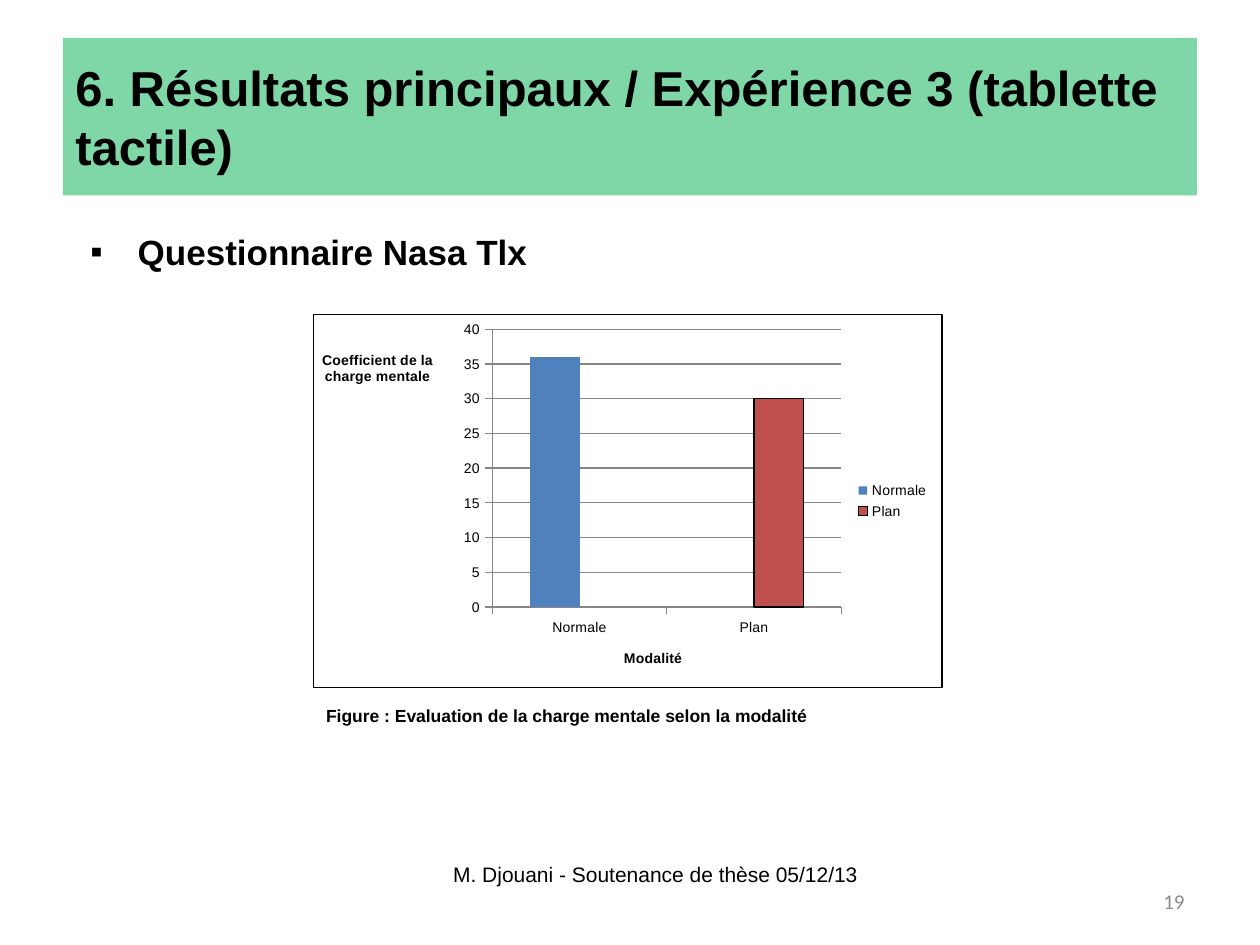
from dataclasses import dataclass

from lxml.etree import SubElement
from pptx import Presentation
from pptx.chart.data import CategoryChartData
from pptx.dml.color import RGBColor
from pptx.enum.chart import XL_CHART_TYPE, XL_LEGEND_POSITION, XL_TICK_MARK
from pptx.enum.shapes import MSO_SHAPE
from pptx.enum.text import MSO_ANCHOR, PP_ALIGN
from pptx.oxml import parse_xml
from pptx.oxml.ns import nsdecls, qn
from pptx.util import Pt


@dataclass(frozen=True)
class Theme:
    font: str = "Arial"
    page_font: str = "Calibri"
    black: RGBColor = RGBColor(0, 0, 0)
    gray: RGBColor = RGBColor(0x8C, 0x8C, 0x8C)
    grid: RGBColor = RGBColor(0x86, 0x86, 0x86)
    green: RGBColor = RGBColor(0x00, 0xB0, 0x50)
    blue: RGBColor = RGBColor(0x4F, 0x81, 0xBD)
    red: RGBColor = RGBColor(0xC0, 0x50, 0x4D)
    title: int = 28
    head: int = 20
    foot: int = 12
    note: int = 10
    chart: int = 8


T = Theme()


def style(font, size, bold=False, color=T.black, name=T.font):
    font.name, font.size, font.bold = name, Pt(size), bold
    font.color.rgb = color


def write(shape, text, size, bold=False, color=T.black, name=T.font,
          align=PP_ALIGN.LEFT, anchor=MSO_ANCHOR.TOP):
    frame = shape.text_frame
    frame.word_wrap = True
    frame.vertical_anchor = anchor
    para = frame.paragraphs[0]
    para.text = text
    para.alignment = align
    style(para.font, size, bold, color, name)
    return para


def add_text(slide, box, text, size, **look):
    shape = slide.shapes.add_textbox(*map(Pt, box))
    return write(shape, text, size, **look)


def add_band(slide, box, text):
    band = slide.shapes.add_shape(MSO_SHAPE.RECTANGLE, *map(Pt, box))
    band.shadow.inherit = False
    band.fill.solid()
    band.fill.fore_color.rgb = T.green
    band.line.fill.background()
    # Half-transparent fill
    tint = band.fill._xPr.find(".//" + qn("a:srgbClr"))
    SubElement(tint, qn("a:alpha")).set("val", "50000")
    write(band, text, T.title, bold=True, anchor=MSO_ANCHOR.MIDDLE)


def add_bullet(para, mark, indent):
    props = para._p.get_or_add_pPr()
    props.set("marL", str(Pt(indent)))
    props.set("indent", str(-Pt(indent)))
    SubElement(props, qn("a:buFont")).set("typeface", T.font)
    SubElement(props, qn("a:buChar")).set("char", mark)
    # The paragraph font must follow the bullet
    props.append(props.find(qn("a:defRPr")))


def place(part, index, inner=False, **spots):
    """Set a manual chart layout, in fractions of the chart."""
    old = part.find(qn("c:layout"))
    if old is not None:
        part.remove(old)
    layout = parse_xml(f"<c:layout {nsdecls('c')}><c:manualLayout/></c:layout>")
    manual = layout[0]
    if inner:
        SubElement(manual, qn("c:layoutTarget")).set("val", "inner")
    for key in ("x", "y"):
        SubElement(manual, qn(f"c:{key}Mode")).set("val", "edge")
    for key, val in spots.items():
        SubElement(manual, qn(f"c:{key}")).set("val", str(val))
    part.insert(index, layout)


def set_axis(axis, text, x, y):
    axis.major_tick_mark = XL_TICK_MARK.OUTSIDE
    axis.minor_tick_mark = XL_TICK_MARK.NONE
    axis.format.line.color.rgb = T.grid
    style(axis.tick_labels.font, T.chart)
    title = axis.axis_title
    para = title.text_frame.paragraphs[0]
    para.text = text
    style(para.font, T.chart, bold=True)
    title.text_frame._txBody.find(qn("a:bodyPr")).set("rot", "0")
    place(title._element, 1, x=x, y=y)


def add_border(chart):
    line = parse_xml(
        f"<c:spPr {nsdecls('c', 'a')}><a:noFill/><a:ln w='{Pt(0.75)}'>"
        f"<a:solidFill><a:srgbClr val='{T.black}'/></a:solidFill></a:ln></c:spPr>")
    chart._chartSpace.find(qn("c:chart")).addnext(line)


def add_bars(slide, box):
    data = CategoryChartData()
    data.categories = ["Normale", "Plan"]
    data.add_series("Normale", (36, None))
    data.add_series("Plan", (None, 30))
    chart = slide.shapes.add_chart(
        XL_CHART_TYPE.COLUMN_CLUSTERED, *map(Pt, box), data).chart
    style(chart.font, T.chart)
    chart.has_title = False
    add_border(chart)

    # Bars
    plot = chart.plots[0]
    plot.gap_width, plot.overlap = 150, 0
    plot.vary_by_categories = False
    for bar, color in zip(plot.series, (T.blue, T.red)):
        bar.format.fill.solid()
        bar.format.fill.fore_color.rgb = color
    edge = plot.series[1].format.line
    edge.color.rgb, edge.width = T.black, Pt(0.75)

    # Axes
    value = chart.value_axis
    value.minimum_scale, value.maximum_scale, value.major_unit = 0, 40, 5
    value.has_major_gridlines = True
    value.major_gridlines.format.line.color.rgb = T.grid
    set_axis(value, "Coefficient de la charge mentale", 0.01, 0.09)
    set_axis(chart.category_axis, "Modalité", 0.49, 0.89)
    area = chart._chartSpace.find(".//" + qn("c:plotArea"))
    place(area, 0, inner=True, x=0.285, y=0.04, w=0.555, h=0.745)

    # Legend
    chart.has_legend = True
    chart.legend.position = XL_LEGEND_POSITION.RIGHT
    chart.legend.include_in_layout = False
    style(chart.legend.font, T.chart)


def main():
    deck = Presentation()
    deck.slide_width, deck.slide_height = Pt(720), Pt(540)
    slide = deck.slides.add_slide(deck.slide_layouts[6])

    # Heading
    add_band(slide, (36, 21.6, 648, 90),
             "6. Résultats principaux / Expérience 3 (tablette tactile)")
    topic = add_text(slide, (44.6, 128.2, 270, 31.5),
                     "Questionnaire Nasa Tlx", T.head, bold=True)
    add_bullet(topic, "▪", 27)

    # Chart and caption
    add_bars(slide, (178.6, 179.3, 360, 213.8))
    add_text(slide, (179.3, 399.6, 363, 19.4),
             "Figure : Evaluation de la charge mentale selon la modalité",
             T.note, bold=True)

    # Footer
    add_text(slide, (241.2, 485.3, 267, 28.8),
             "M. Djouani - Soutenance de thèse 05/12/13", T.foot,
             align=PP_ALIGN.CENTER, anchor=MSO_ANCHOR.MIDDLE)
    add_text(slide, (516, 500.5, 168, 28.8), "19", T.foot, color=T.gray,
             name=T.page_font, align=PP_ALIGN.RIGHT, anchor=MSO_ANCHOR.MIDDLE)

    deck.save("out.pptx")


if __name__ == "__main__":
    main()
